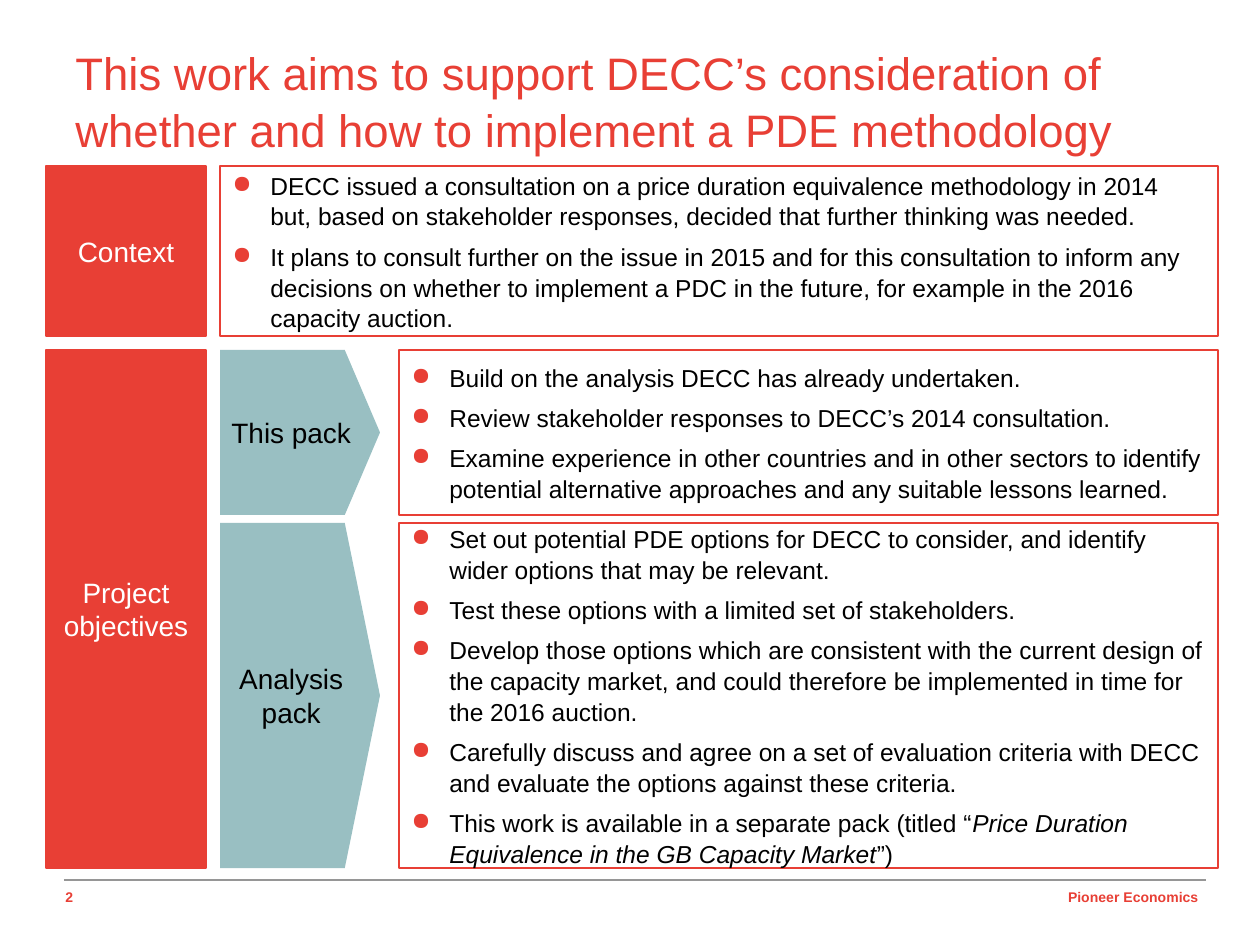
from dataclasses import dataclass

from lxml import etree
from pptx import Presentation, util as u
from pptx.dml.color import RGBColor
from pptx.enum import shapes, text
from pptx.oxml.ns import qn

PX = 914400 / 126


@dataclass(frozen=True)
class Theme:
    font: str = "Arial"
    red: str = "E83F35"
    teal: str = "99BFC2"
    grey: str = "969696"
    black: str = "000000"
    white: str = "FFFFFF"
    title: int = 26
    label: int = 16
    body: int = 14
    footer: int = 8
    line: float = 0.75


THEME = Theme()

TITLE = ("This work aims to support DECC’s consideration of whether and how "
         "to implement a PDE methodology")
PAGE_NUMBER = "2"
FOOTER = "Pioneer Economics"

# A bullet is a list of spans; every second span is italic.
CONTEXT = [
    ["DECC issued a consultation on a price duration equivalence methodology in 2014 but, "
     "based on stakeholder responses, decided that further thinking was needed."],
    ["It plans to consult further on the issue in 2015 and for this consultation to inform any "
     "decisions on whether to implement a PDC in the future, for example in the 2016 "
     "capacity auction."],
]
THIS_PACK = [
    ["Build on the analysis DECC has already undertaken."],
    ["Review stakeholder responses to DECC’s 2014 consultation."],
    ["Examine experience in other countries and in other sectors to identify potential "
     "alternative approaches and any suitable lessons learned."],
]
ANALYSIS_PACK = [
    ["Set out potential PDE options for DECC to consider, and identify wider options that "
     "may be relevant."],
    ["Test these options with a limited set of stakeholders."],
    ["Develop those options which are consistent with the current design of the capacity "
     "market, and could therefore be implemented in time for the 2016 auction."],
    ["Carefully discuss and agree on a set of evaluation criteria with DECC and evaluate the "
     "options against these criteria."],
    ["This work is available in a separate pack (titled “",
     "Price Duration Equivalence in the GB Capacity Market", "”)"],
]

# Column left edges, label width and right edge; rows as (top, bottom)
LABEL_X, ARROW_X, DETAIL_X, RIGHT = 46, 220, 399, 1218
LABEL_W = 160
CONTEXT_ROW, THIS_ROW, ANALYSIS_ROW = (166, 336), (350, 515), (523, 868)

LABELS = [
    ("Context", CONTEXT_ROW),
    ("Project objectives", (THIS_ROW[0], ANALYSIS_ROW[1])),
]
ARROWS = [("This pack", THIS_ROW), ("Analysis pack", ANALYSIS_ROW)]
DETAILS = [
    (CONTEXT, ARROW_X, CONTEXT_ROW),
    (THIS_PACK, DETAIL_X, THIS_ROW),
    (ANALYSIS_PACK, DETAIL_X, ANALYSIS_ROW),
]


def px(*lengths):
    return [u.Emu(round(n * PX)) for n in lengths]


def rgb(color):
    return RGBColor.from_string(color)


def style(para, size, color, bold=False, align=text.PP_ALIGN.LEFT):
    para.alignment = align
    para.font.name, para.font.size, para.font.bold = THEME.font, u.Pt(size), bold
    para.font.color.rgb = rgb(color)


def add_box(page, kind, left, row, width, fill=None, line=None):
    top, bottom = row
    box = page.shapes.add_shape(kind, *px(left, top, width, bottom - top))
    box.shadow.inherit = False
    if fill:
        box.fill.solid()
        box.fill.fore_color.rgb = rgb(fill)
    else:
        box.fill.background()
    if line:
        box.line.color.rgb = rgb(line)
        box.line.width = u.Pt(THEME.line)
    else:
        box.line.fill.background()
    box.text_frame.word_wrap = True
    box.text_frame.vertical_anchor = text.MSO_ANCHOR.MIDDLE
    return box


def set_label(box, words, color):
    para = box.text_frame.paragraphs[0]
    para.text = words
    style(para, THEME.label, color, align=text.PP_ALIGN.CENTER)


def add_bullet(para):
    """Give the paragraph a red dot and a hanging indent."""
    props = para._p.get_or_add_pPr()
    indent = px(38)[0]
    props.set("marL", str(indent))
    props.set("indent", str(-indent))
    color = etree.Element(qn("a:buClr"))
    etree.SubElement(color, qn("a:srgbClr"), val=THEME.red)
    dot = etree.Element(qn("a:buChar"), char="●")
    spacing = props.find(qn("a:spcAft"))
    spacing.addnext(color)
    color.addnext(dot)


def fill_bullets(frame, bullets):
    for i, spans in enumerate(bullets):
        para = frame.add_paragraph() if i else frame.paragraphs[0]
        para.line_spacing = 1.05
        para.space_before = para.space_after = u.Pt(2.7)
        style(para, THEME.body, THEME.black)
        add_bullet(para)
        for j, words in enumerate(spans):
            span = para.add_run()
            span.text = words
            if j % 2:
                span.font.italic = True


def add_text(page, words, place, size, **options):
    box = page.shapes.add_textbox(*px(*place))
    box.text_frame.word_wrap = True
    para = box.text_frame.paragraphs[0]
    para.text = words
    style(para, size, THEME.red, **options)
    return para


def add_footer(page):
    rule = page.shapes.add_connector(shapes.MSO_CONNECTOR.STRAIGHT, *px(64, 880, 1206, 880))
    rule.line.color.rgb = rgb(THEME.grey)
    rule.line.width = u.Pt(THEME.line)
    etree.SubElement(rule._element.spPr, qn("a:effectLst"))
    add_text(page, PAGE_NUMBER, (53, 882, 47, 31), THEME.footer, bold=True)
    add_text(page, FOOTER, (907, 882, 304, 29), THEME.footer, bold=True,
             align=text.PP_ALIGN.RIGHT)


def main():
    deck = Presentation()
    deck.slide_width, deck.slide_height = px(1260, 945)
    page = deck.slides.add_slide(deck.slide_layouts[6])
    kinds = shapes.MSO_SHAPE

    add_footer(page)
    for words, row in LABELS:
        box = add_box(page, kinds.RECTANGLE, LABEL_X, row, LABEL_W, THEME.red, THEME.red)
        set_label(box, words, THEME.white)
    for bullets, left, row in DETAILS:
        box = add_box(page, kinds.RECTANGLE, left, row, RIGHT - left, line=THEME.red)
        fill_bullets(box.text_frame, bullets)
    for words, row in ARROWS:
        box = add_box(page, kinds.PENTAGON, ARROW_X, row, LABEL_W, THEME.teal)
        box.adjustments[0] = 0.22
        box.text_frame.margin_left = box.text_frame.margin_right = 0
        set_label(box, words, THEME.black)
    add_text(page, TITLE, (63, 36, 1144, 94), THEME.title).line_spacing = 1.05

    deck.save("out.pptx")


if __name__ == "__main__":
    main()
